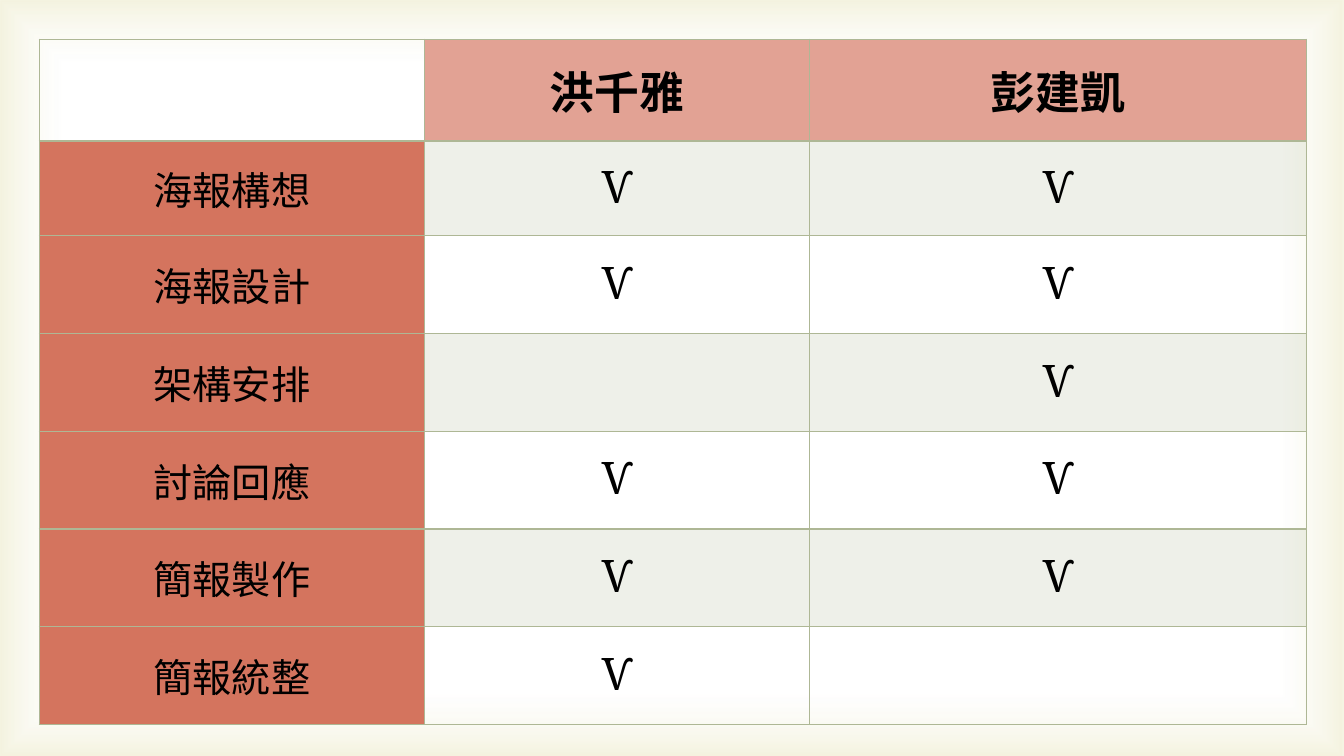
from dataclasses import dataclass
from typing import Optional

from lxml.etree import SubElement
from pptx import Presentation
from pptx.dml.color import RGBColor as RGB
from pptx.enum.shapes import MSO_SHAPE as SHAPE
from pptx.enum.text import MSO_ANCHOR as ANCHOR, PP_ALIGN as ALIGN
from pptx.oxml import parse_xml
from pptx.oxml.ns import nsdecls, qn
from pptx.util import Inches, Pt

COLORS = {
    "white": "FFFFFF",
    "glow": "D1CA75",
    "header": "E2A294",
    "task": "D4745E",
    "sage": "AEB795",
    "text": "000000",
}
CJK = "Noto Sans CJK SC"
CHECK = "Ѵ"
MEMBERS = ["洪千雅", "彭建凱"]
COL_WIDTHS = [3.82, 3.82, 4.93]
ROW_HEIGHTS = [1.01, 0.94] + [0.97] * 5


@dataclass
class Task:
    name: str
    done: tuple[bool, bool]


@dataclass
class CellStyle:
    size: int = 32
    font: str = CJK
    bold: bool = False
    fill: Optional[str] = None
    alpha: int = 100
    bottom: int = 1


TASKS = [
    Task("海報構想", (True, True)),
    Task("海報設計", (True, True)),
    Task("架構安排", (False, True)),
    Task("討論回應", (True, True)),
    Task("簡報製作", (True, True)),
    Task("簡報統整", (True, False)),
]
CORNER = CellStyle(bottom=2)
HEADER = CellStyle(bold=True, fill="header", bottom=2)
TASK = CellStyle(size=28, fill="task")
BANDS = [CellStyle(font="Cambria", fill="sage", alpha=20), CellStyle(font="Cambria")]


def add_glow(slide, width: int, height: int) -> None:
    sp = slide.shapes.add_shape(SHAPE.RECTANGLE, 0, 0, width, height)
    sp.shadow.inherit = False
    sp.line.fill.background()
    sp.fill.background()
    stops = "".join(
        f'<a:gs pos="{pos}000"><a:srgbClr val="{COLORS[color]}">'
        f'<a:alpha val="{alpha}000"/></a:srgbClr></a:gs>'
        for pos, color, alpha in [(83, "white", 11), (100, "glow", 23)]
    )
    grad = parse_xml(
        f'<a:gradFill {nsdecls("a")} rotWithShape="1"><a:gsLst>{stops}</a:gsLst>'
        '<a:path path="rect"><a:fillToRect l="50000" t="50000" r="50000" b="50000"/>'
        '</a:path></a:gradFill>'
    )
    sp_pr = sp._element.spPr
    sp_pr.replace(sp_pr.find(qn("a:noFill")), grad)


def add_borders(cell, bottom: int) -> None:
    tc_pr = cell._tc.get_or_add_tcPr()
    for i, (side, width) in enumerate([("L", 1), ("R", 1), ("T", 1), ("B", bottom)]):
        tc_pr.insert(i, parse_xml(
            f'<a:ln{side} {nsdecls("a")} w="{Pt(width)}"><a:solidFill>'
            f'<a:srgbClr val="{COLORS["sage"]}"/></a:solidFill></a:ln{side}>'
        ))


def fill_cell(cell, text: str, style: CellStyle) -> None:
    cell.vertical_anchor = ANCHOR.MIDDLE
    if style.fill:
        cell.fill.solid()
        cell.fill.fore_color.rgb = RGB.from_string(COLORS[style.fill])
        if style.alpha < 100:
            color = cell._tc.tcPr.find(".//" + qn("a:srgbClr"))
            SubElement(color, qn("a:alpha"), val=str(style.alpha * 1000))
    else:
        cell.fill.background()
    add_borders(cell, style.bottom)
    if text:
        p = cell.text_frame.paragraphs[0]
        p.alignment = ALIGN.CENTER
        r = p.add_run()
        r.text = text
        r.font.size = Pt(style.size)
        r.font.bold = style.bold
        r.font.name = style.font
        r.font.color.rgb = RGB.from_string(COLORS["text"])
        SubElement(r._r.get_or_add_rPr(), qn("a:ea"), typeface=style.font)


def add_task_table(slide) -> None:
    table = slide.shapes.add_table(
        len(ROW_HEIGHTS), len(COL_WIDTHS), Inches(0.39), Inches(0.39),
        Inches(sum(COL_WIDTHS)), Inches(sum(ROW_HEIGHTS)),
    ).table
    table.first_row = False
    table.horz_banding = False
    for column, width in zip(table.columns, COL_WIDTHS):
        column.width = Inches(width)
    for row, height in zip(table.rows, ROW_HEIGHTS):
        row.height = Inches(height)

    fill_cell(table.cell(0, 0), "", CORNER)
    for col, member in enumerate(MEMBERS, 1):
        fill_cell(table.cell(0, col), member, HEADER)
    for row, task in enumerate(TASKS, 1):
        fill_cell(table.cell(row, 0), task.name, TASK)
        for col, done in enumerate(task.done, 1):
            fill_cell(table.cell(row, col), CHECK if done else "", BANDS[(row - 1) % 2])


def main() -> None:
    prs = Presentation()
    prs.slide_width = Inches(13.33)
    prs.slide_height = Inches(7.5)
    s = prs.slides.add_slide(prs.slide_layouts[6])
    s.background.fill.solid()
    s.background.fill.fore_color.rgb = RGB.from_string(COLORS["white"])
    add_glow(s, prs.slide_width, prs.slide_height)
    add_task_table(s)
    prs.save("out.pptx")


if __name__ == "__main__":
    main()
